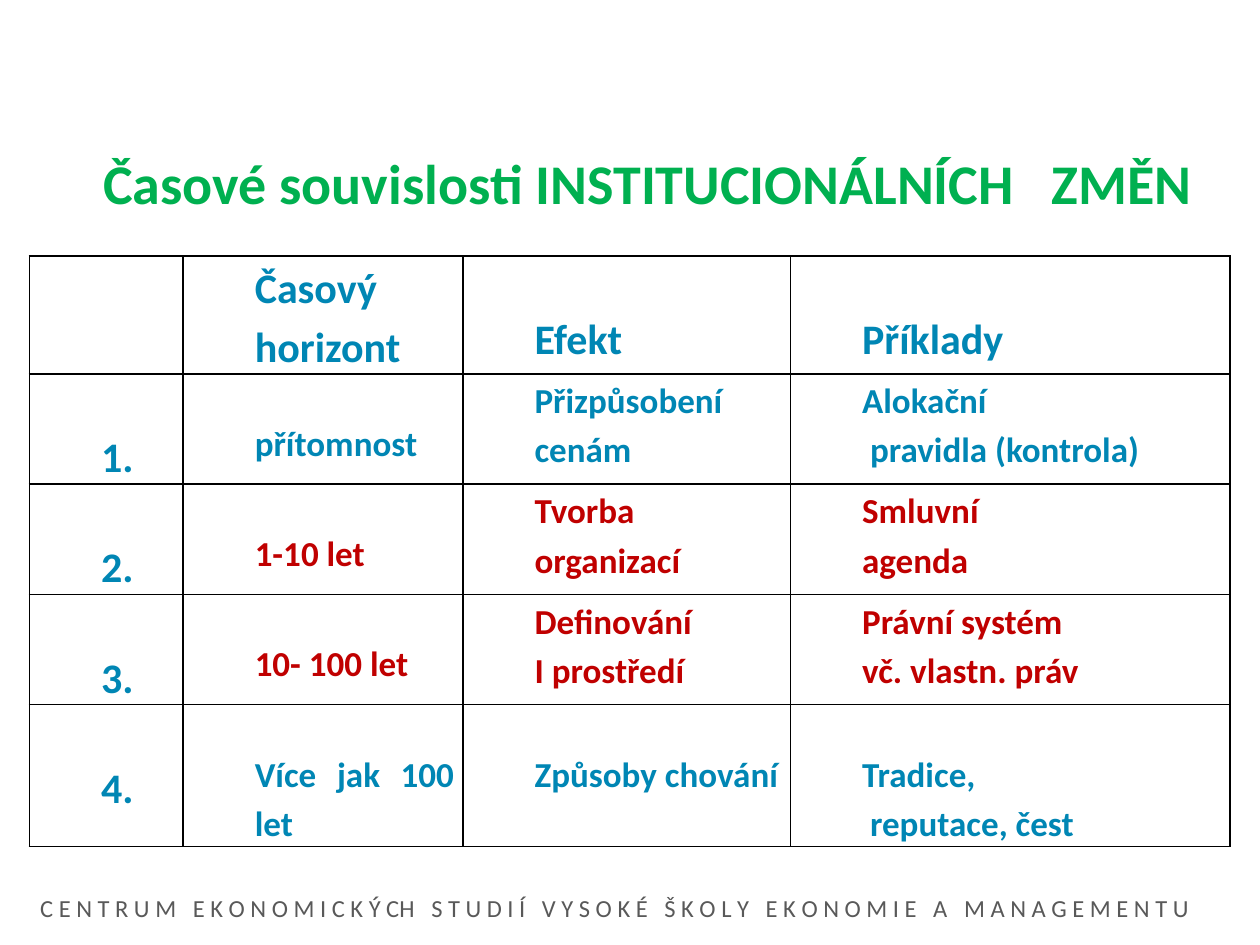
from lxml.etree import SubElement
from pptx import Presentation
from pptx.dml.color import RGBColor
from pptx.enum.text import MSO_ANCHOR as Anchor, MSO_AUTO_SIZE as AutoSize, PP_ALIGN as Align
from pptx.oxml.ns import qn
from pptx.util import Pt

BLUE, RED, GREEN, GREY, BLACK = "0086B4", "C00000", "00B050", "595959", "000000"
HEAD_SIZE, BODY_SIZE = 24, 20
LINE_HEIGHT = 1.22
INDENT, HANGING_EXTRA = 36, 4.5
COLUMN_WIDTHS = [87.8, 159.9, 187.2, 251.3]
ROW_HEIGHTS = [67.4, 63, 63, 63, 81]
HEADINGS = ["Časový horizont", "Efekt", "Příklady"]
HORIZONS = [
    (BLUE, "přítomnost", ["Přizpůsobení cenám"], ["Alokační", "pravidla (kontrola)"]),
    (RED, "1-10 let", ["Tvorba organizací"], ["Smluvní", "agenda"]),
    (RED, "10- 100 let", ["Definování", "I prostředí"], ["Právní systém", "vč. vlastn. práv"]),
    (BLUE, "Více jak 100 let", ["Způsoby chování"], ["Tradice,", "reputace, čest"]),
]


def rgb(value):
    return RGBColor.from_string(value)


def add_run(paragraph, text, size, color, bold=True):
    run = paragraph.add_run()
    run.text = text
    run.font.name = "Calibri"
    run.font.size = Pt(size)
    run.font.bold = bold
    run.font.color.rgb = rgb(color)


def add_title(slide):
    title = slide.shapes.title
    title.left, title.top, title.width, title.height = Pt(46.4), Pt(62), Pt(648), Pt(84)
    frame = title.text_frame
    frame.auto_size = AutoSize.NONE
    frame.vertical_anchor = Anchor.MIDDLE
    paragraph = frame.paragraphs[0]
    paragraph.alignment = Align.CENTER
    add_run(paragraph, "Časové souvislosti INSTITUCIONÁLNÍCH   ZMĚN", 32, GREEN)


def add_footer(slide):
    footer = slide.shapes.add_textbox(Pt(-28.1), Pt(506.2), Pt(759.6), Pt(24.5))
    frame = footer.text_frame
    frame.word_wrap = True
    frame.vertical_anchor = Anchor.MIDDLE
    paragraph = frame.paragraphs[0]
    paragraph.alignment = Align.CENTER
    text = ("C E N T R U M   E K O N O M I C K Ý CH   S T U D I Í   V Y S O K É   "
            "Š K O L Y   E K O N O M I E   A   M A N A G E M E N T U")
    add_run(paragraph, text, 14, GREY, bold=False)


def add_borders(cell):
    properties = cell._tc.get_or_add_tcPr()
    for side in ("lnL", "lnR", "lnT", "lnB"):
        border = SubElement(properties, qn(f"a:{side}"), w=str(Pt(1)))
        fill = SubElement(border, qn("a:solidFill"))
        SubElement(fill, qn("a:srgbClr"), val=BLACK)


def fill_cell(cell, lines, size, color, lowered=False, indented=()):
    cell.margin_left = cell.margin_right = Pt(5)
    cell.margin_top = Pt(round(size * LINE_HEIGHT, 1) if lowered else 0)
    cell.margin_bottom = Pt(0)
    frame = cell.text_frame
    for index, line in enumerate(lines):
        paragraph = frame.add_paragraph() if index else frame.paragraphs[0]
        margin = INDENT + (HANGING_EXTRA if line in indented else 0)
        paragraph._p.get_or_add_pPr().set("marL", str(Pt(margin)))
        paragraph.alignment = Align.JUSTIFY
        paragraph.line_spacing = 1.15
        add_run(paragraph, line, size, color)


def add_horizon_table(slide):
    frame = slide.shapes.add_table(len(ROW_HEIGHTS), len(COLUMN_WIDTHS), Pt(16.8), Pt(146.3),
                                   Pt(sum(COLUMN_WIDTHS)), Pt(sum(ROW_HEIGHTS)))
    table = frame.table
    table.first_row = table.horz_banding = False
    for column, width in zip(table.columns, COLUMN_WIDTHS):
        column.width = Pt(width)
    for row, height in zip(table.rows, ROW_HEIGHTS):
        row.height = Pt(height)
    for cell in table.iter_cells():
        add_borders(cell)
        cell.fill.background()

    for column, heading in enumerate(HEADINGS, 1):
        fill_cell(table.cell(0, column), [heading], HEAD_SIZE, BLUE, lowered=column > 1)
    indented = ("pravidla (kontrola)", "reputace, čest")
    for number, (color, horizon, effect, examples) in enumerate(HORIZONS, 1):
        last = number == len(HORIZONS)
        fill_cell(table.cell(number, 0), [f"{number}."], HEAD_SIZE, BLUE, lowered=True)
        fill_cell(table.cell(number, 1), [horizon], BODY_SIZE, color, lowered=True)
        fill_cell(table.cell(number, 2), effect, BODY_SIZE, color, lowered=last)
        fill_cell(table.cell(number, 3), examples, BODY_SIZE, color, last, indented)


def main():
    presentation = Presentation()
    presentation.slide_width, presentation.slide_height = Pt(720), Pt(540)
    slide = presentation.slides.add_slide(presentation.slide_layouts[5])
    add_title(slide)
    add_horizon_table(slide)
    add_footer(slide)
    presentation.save("out.pptx")


if __name__ == "__main__":
    main()
